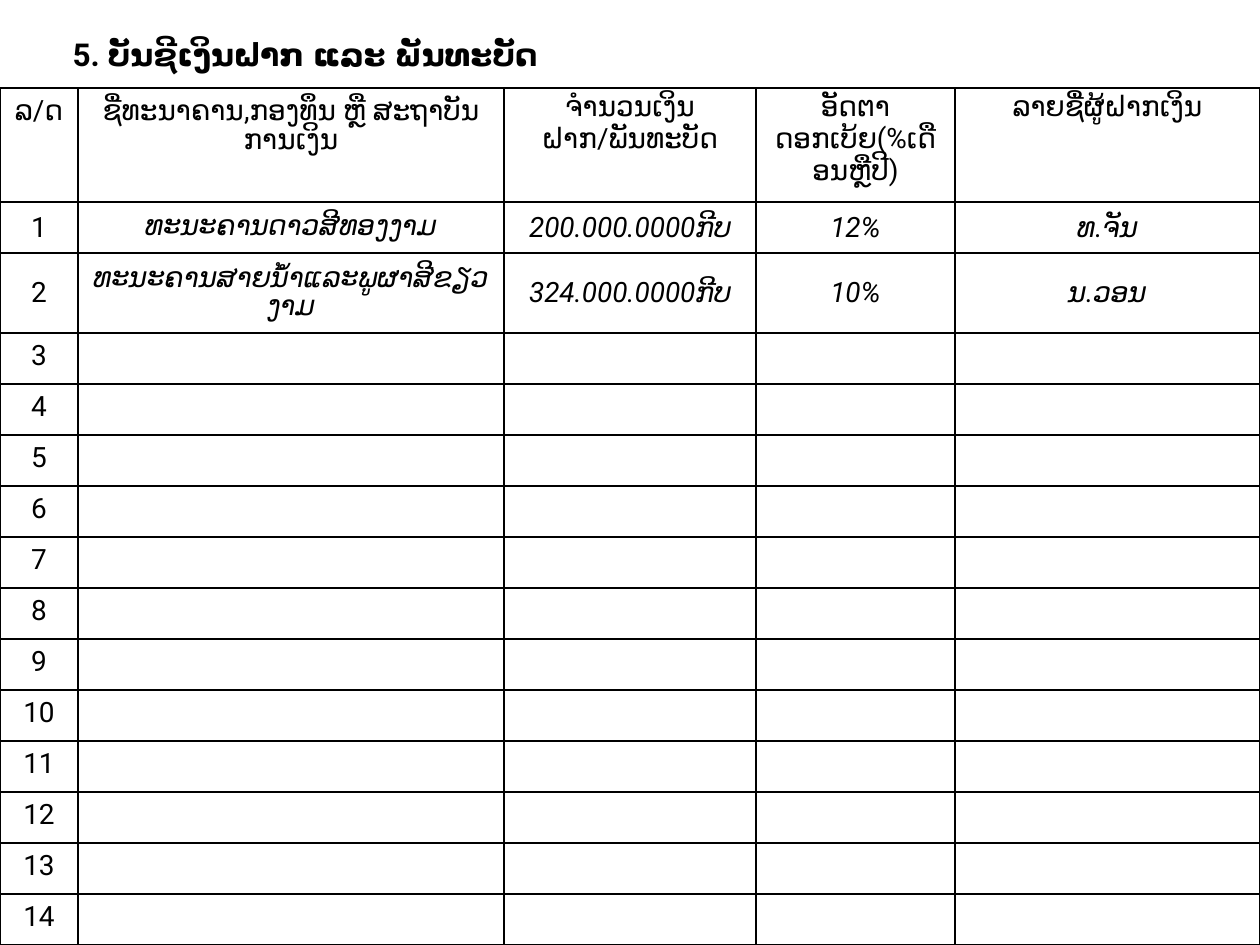
from lxml import etree
from pptx import Presentation
from pptx.dml.color import RGBColor
from pptx.enum.text import MSO_ANCHOR, MSO_AUTO_SIZE, PP_ALIGN
from pptx.oxml.ns import qn
from pptx.util import Pt

TITLE = "5. ບັນຊີເງິນຝາກ ແລະ ພັນທະບັດ"
HEADERS = [
    "ລ/ດ",
    "ຊື່ທະນາຄານ,ກອງທຶນ ຫຼື ສະຖາບັນການເງິນ",
    "ຈຳນວນເງິນ ຝາກ/ພັນທະບັດ",
    "ອັດຕາດອກເບ້ຍ(%ເດືອນຫຼືປີ)",
    "ລາຍຊື່ຜູ້ຝາກເງິນ",
]
DEPOSITS = [
    ("ທະນະຄານດາວສີທອງງາມ", "200.000.0000ກີບ", "12%", "ທ.ຈັນ"),
    ("ທະນະຄານສາຍນ້ຳແລະພູຜາສີຂຽວງາມ", "324.000.0000ກີບ", "10%", "ນ.ວອນ"),
]
ENTRY_COUNT = 14
COLUMN_WIDTHS = [78, 426, 252, 199, 305]
ROW_HEIGHT = 51
HEADER_HEIGHT = 114
TALL_ENTRY_HEIGHT = 80

FONT = "Roboto"
BLACK = RGBColor(0, 0, 0)
CENTER = PP_ALIGN.CENTER
MIDDLE = MSO_ANCHOR.MIDDLE
GROW = MSO_AUTO_SIZE.SHAPE_TO_FIT_TEXT
EMU_PER_PX = 914400 / 126


def px(value):
    return round(value * EMU_PER_PX)


def write(text_frame, text, size, bold=False, italic=False):
    paragraph = text_frame.paragraphs[0]
    paragraph.text = text
    paragraph.alignment = CENTER
    font = paragraph.font
    font.name = FONT
    font.size = Pt(size)
    font.bold = bold
    font.italic = italic
    font.color.rgb = BLACK


def add_borders(cell):
    properties = cell._tc.get_or_add_tcPr()
    for index, side in enumerate(("lnL", "lnR", "lnT", "lnB")):
        line = etree.Element(qn(f"a:{side}"), w=str(Pt(1)))
        fill = etree.SubElement(line, qn("a:solidFill"))
        etree.SubElement(fill, qn("a:srgbClr"), val=str(BLACK))
        properties.insert(index, line)


def add_title(slide):
    title = slide.shapes.add_textbox(px(0), px(29), px(610), px(50))
    title.text_frame.word_wrap = True
    title.text_frame.auto_size = GROW
    write(title.text_frame, TITLE, 18, bold=True)


def add_deposit_table(slide):
    rows = [HEADERS]
    for number in range(1, ENTRY_COUNT + 1):
        details = DEPOSITS[number - 1] if number <= len(DEPOSITS) else [""] * 4
        rows.append([str(number), *details])
    heights = [ROW_HEIGHT] * len(rows)
    heights[0] = HEADER_HEIGHT
    heights[2] = TALL_ENTRY_HEIGHT

    table = slide.shapes.add_table(
        len(rows), len(HEADERS), px(0), px(88), px(sum(COLUMN_WIDTHS)), px(sum(heights))
    ).table
    table.first_row = False
    table.horz_banding = False
    for column, width in zip(table.columns, COLUMN_WIDTHS):
        column.width = px(width)
    for row_index, texts in enumerate(rows):
        table.rows[row_index].height = px(heights[row_index])
        filled = 1 <= row_index <= len(DEPOSITS)
        for column_index, text in enumerate(texts):
            cell = table.cell(row_index, column_index)
            cell.fill.background()
            add_borders(cell)
            write(cell.text_frame, text, 16, italic=filled and column_index > 0)
            if filled:
                cell.vertical_anchor = MIDDLE


def main():
    presentation = Presentation()
    presentation.slide_width = px(1260)
    presentation.slide_height = px(945)
    slide = presentation.slides.add_slide(presentation.slide_layouts[6])
    add_title(slide)
    add_deposit_table(slide)
    presentation.save("out.pptx")


if __name__ == "__main__":
    main()
